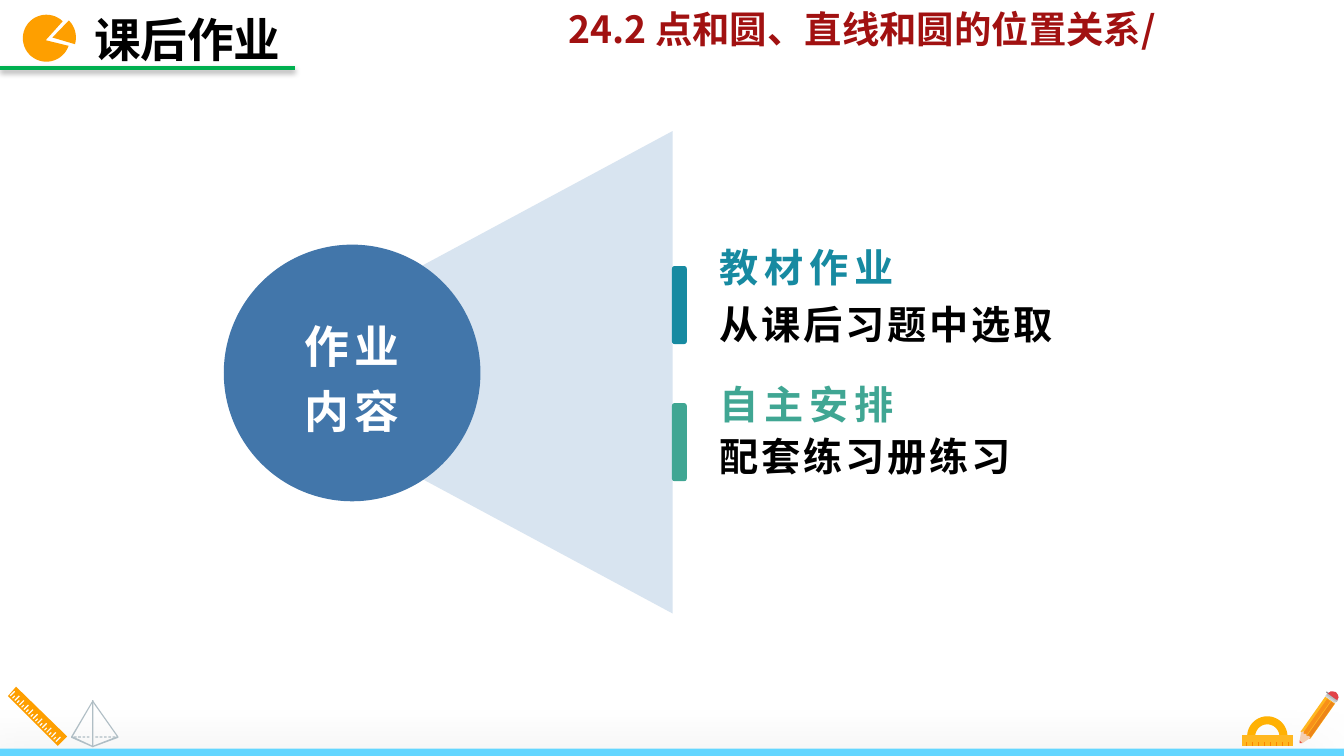
import math
import pptx
import pptx.dml.color
import pptx.enum.shapes
import pptx.enum.text
import pptx.oxml.ns
import pptx.util
from lxml import etree

FONT = "Noto Sans CJK SC"
SHAPES = pptx.enum.shapes.MSO_SHAPE
ANCHOR = pptx.enum.text.MSO_ANCHOR
ALIGN = pptx.enum.text.PP_ALIGN

presentation = pptx.Presentation()
presentation.slide_width = pptx.util.Inches(10)
presentation.slide_height = presentation.slide_width * 9 // 16
cell = presentation.slide_width // 100
slide = presentation.slides.add_slide(presentation.slide_layouts[4])


def paint(shape, colour):
    shape.shadow.inherit = False
    shape.fill.solid()
    shape.fill.fore_color.rgb = pptx.dml.color.RGBColor.from_string(colour)
    shape.line.fill.background()


def write(shape, text, size, colour, spacing=0, leading=1.0, anchor=ANCHOR.TOP,
          margins=(1, 0.5, 1, 0.5), align=ALIGN.LEFT, wrap=True):
    frame = shape.text_frame
    frame.text = text
    frame.word_wrap = wrap
    frame.auto_size = pptx.enum.text.MSO_AUTO_SIZE.NONE
    frame.vertical_anchor = anchor
    frame.margin_left, frame.margin_top, frame.margin_right, frame.margin_bottom = [
        int(margin * cell) for margin in margins]
    for paragraph in frame.paragraphs:
        properties = paragraph._p.get_or_add_pPr()
        properties.set("marL", "0")
        properties.set("indent", "0")
        etree.SubElement(properties, pptx.oxml.ns.qn("a:buNone"))
        paragraph.alignment = align
        paragraph.line_spacing = leading
        paragraph.space_before = pptx.util.Pt(0)
        for run in paragraph.runs:
            run.font.size = pptx.util.Pt(size)
            run.font.bold = True
            run.font.name = FONT
            run.font.color.rgb = pptx.dml.color.RGBColor.from_string(colour)
            run_properties = run._r.get_or_add_rPr()
            run_properties.set("spc", str(int(spacing * 100)))
            etree.SubElement(run_properties, pptx.oxml.ns.qn("a:ea"), typeface=FONT)


presets = [
    (SHAPES.RECTANGLE, 0, 55.7, 100, 0.55, 0, "63D6FF"),
    (SHAPES.RECTANGLE, 97.6, 51.8, 0.9, 3.2, 35.2, "FFB720"),
    (SHAPES.RECTANGLE, 98.1, 52, 0.3, 3.2, 35.2, "ED8518"),
    (SHAPES.RECTANGLE, 97.8, 51.8, 0.3, 3.2, 35.2, "F89019"),
    (SHAPES.RECTANGLE, 98.6, 51.8, 0.9, 0.3, 35.2, "D1D3D4"),
    (SHAPES.RECTANGLE, 98.7, 51.8, 0.9, 0.2, 35.2, "BCBEC0"),
    (SHAPES.RECTANGLE, 98.6, 51.7, 0.9, 0.1, 35.2, "939598"),
    (SHAPES.RECTANGLE, 6.85, 52.1, 0.1, 3.5, 0, "B0BEC5"),
    (SHAPES.ISOSCELES_TRIANGLE, 15.4, 11, 35.9, 33.4, 270, "D8E4F0"),
    (SHAPES.OVAL, 16.65, 18.2, 19.1, 19.1, 0, "4276AA"),
    (SHAPES.ROUNDED_RECTANGLE, 50, 19.8, 1.1, 5.8, 0, "178AA1"),
    (SHAPES.ROUNDED_RECTANGLE, 50, 30, 1.1, 5.8, 0, "40A693"),
]
presets += [(SHAPES.RECTANGLE, 5.5 + 0.32 * dash, 54.8, 0.2, 0.1, 0, "B0BEC5")
            for dash in range(10) if dash != 4]
drawn = []
for kind, left, top, width, height, rotation, colour in presets:
    shape = slide.shapes.add_shape(kind, *[int(n * cell) for n in (left, top, width, height)])
    shape.rotation = rotation
    paint(shape, colour)
    drawn.append(shape)
bottom_bar, circle = drawn[0], drawn[9]

arcs = {}
for name, x, y, radius, start, end in [
    ("pie", 3.45, 2.85, 1.75, 19, 314),
    ("slice", 3.85, 2.8, 1.8, -45, 16),
    ("protractor rim", 94.3, 54.8, 1.5, 180, 360),
    ("protractor hole", 94.3, 54.8, 0.9, 360, 180),
]:
    angles = [math.radians(start + (end - start) * step / 40) for step in range(41)]
    arcs[name] = [(x + radius * math.cos(a), y + radius * math.sin(a)) for a in angles]

ruler = [[(1.2, 51.1), (0.6, 51.8), (4.3, 55.5), (5, 54.8)]]
for tick in range(21):
    x, y = 0.72 + 0.17 * tick, 51.75 + 0.17 * tick
    length = 0.18 if tick % 2 else 0.35
    ruler.append([(x, y), (x + length, y - length),
                  (x + length + 0.08, y - length + 0.08), (x + 0.08, y + 0.08)])

outlines = [
    ("FE9F00", [arcs["pie"] + [(3.4, 3)], arcs["slice"] + [(3.9, 2.8)]]),
    ("FFB103", [arcs["protractor rim"] + arcs["protractor hole"]]),
    ("FFB720", [[(92.4, 54.7), (96.2, 54.7), (96.2, 55.5), (92.4, 55.5)]]),
    ("FE9F00", ruler),
    ("B0BEC5", [[(6.9, 52.1), (5.3, 54.8), (5.3, 54.9), (6.9, 55.6), (8.8, 54.9), (8.8, 54.8)],
                [(6.9, 52.25), (8.7, 54.8), (6.9, 55.5), (5.42, 54.8)]]),
    ("F4CFB2", [[(96.7, 55.1), (96.9, 55.3), (97.5, 54.9), (97.4, 54.75), (97.2, 54.75),
                 (97.2, 54.6), (97, 54.6), (97, 54.4), (96.8, 54.5)]]),
    ("E74C3C", [[(96.7, 55.1), (96.7, 55.3), (96.9, 55.3), (96.8, 55.2)]]),
    ("E24348", [[(98.8, 51.6), (99, 51.45), (99.2, 51.45), (99.4, 51.5),
                 (99.55, 51.7), (99.6, 51.9), (99.5, 52.1)]]),
]
outlines += [("FB8501", [[(x, 55.2), (x + 0.08, 55.2), (x + 0.08, 55.5), (x, 55.5)]])
             for x in [92.7 + 0.45 * mark for mark in range(8)]]
for colour, contours in outlines:
    contours = [[(x * cell, y * cell) for x, y in contour] for contour in contours]
    builder = slide.shapes.build_freeform(*contours[0][0])
    builder.add_line_segments(contours[0][1:])
    for contour in contours[1:]:
        builder.move_to(*contour[0])
        builder.add_line_segments(contour[1:])
    paint(builder.convert_to_shape(), colour)

underline = slide.shapes.add_connector(
    pptx.enum.shapes.MSO_CONNECTOR.STRAIGHT, 0, int(5.06 * cell), int(21.95 * cell), int(5.06 * cell))
underline.line.color.rgb = pptx.dml.color.RGBColor.from_string("00B050")
underline.line.width = pptx.util.Pt(2)

for shape, opacity, blur, distance, direction in [
    (bottom_bar, 50, 35, 20, 135), (underline, 38, 3.1, 1.6, 90),
]:
    effects = shape._element.spPr.get_or_add_effectLst()
    shadow = etree.SubElement(
        effects, pptx.oxml.ns.qn("a:outerShdw"), blurRad=str(pptx.util.Pt(blur)),
        dist=str(pptx.util.Pt(distance)), dir=str(direction * 60000), rotWithShape="0")
    shadow_colour = etree.SubElement(shadow, pptx.oxml.ns.qn("a:srgbClr"), val="000000")
    etree.SubElement(shadow_colour, pptx.oxml.ns.qn("a:alpha"), val=str(opacity * 1000))

write(circle, "作业\n内容", 24, "FFFFFF", 3, 1.2, ANCHOR.MIDDLE, (0.7,) * 4, ALIGN.CENTER)

header = slide.shapes.add_textbox(*[int(n * cell) for n in (41.3, 0, 47.2, 4.4)])
write(header, "24.2 点和圆、直线和圆的位置关系/", 20, "A11111", wrap=False)

title, first_heading, first_body, second_heading, second_body = slide.placeholders
heading_style = (3, 1.2, ANCHOR.BOTTOM, (0.7, 0.7, 0.7, 0))
body_style = (1.5, 1.2, ANCHOR.MIDDLE, (0.7, 0, 0.7, 0.4))
for placeholder, box, text, size, colour, style, wrap in [
    (title, (6, 0.3, 16, 5.2), "课后作业", 25, "000000", (), False),
    (first_heading, (52.85, 18.2, 16.9, 3.4), "教材作业", 21, "178AA1", heading_style, True),
    (first_body, (52.85, 21.9, 39.3, 4.1), "从课后习题中选取", 21, "000000", body_style, True),
    (second_heading, (52.85, 28.4, 16.9, 3.4), "自主安排", 21, "40A693", heading_style, True),
    (second_body, (52.85, 31.7, 40, 4.1), "配套练习册练习", 21, "000000", body_style, True),
]:
    placeholder.left, placeholder.top, placeholder.width, placeholder.height = [
        int(n * cell) for n in box]
    write(placeholder, text, size, colour, *style, wrap=wrap)

presentation.save("out.pptx")
